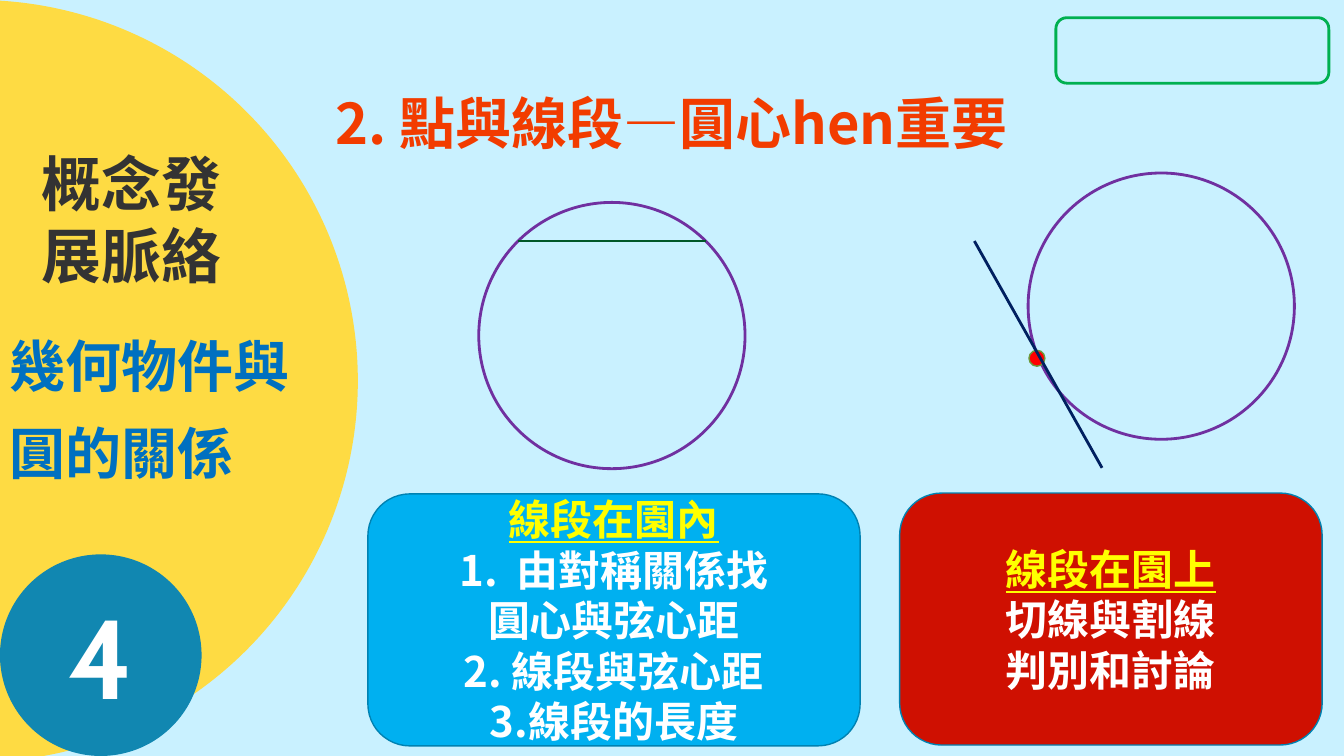
from dataclasses import dataclass

from lxml import etree
from pptx import Presentation
from pptx import util as u
from pptx.dml.color import RGBColor
from pptx.enum import shapes, text
from pptx.oxml import ns

COLUMNS, ROWS = 160, 90
CELL = u.Inches(7.5) / ROWS


@dataclass(frozen=True)
class Theme:
    sky: str = "C9F1FF"
    sun: str = "FEDB43"
    badge: str = "1187B1"
    ink: str = "333333"
    blue: str = "0070C0"
    title: str = "F23C00"
    circle: str = "7030A0"
    chord: str = "005828"
    navy: str = "002060"
    green: str = "00B050"
    red: str = "FF0000"
    dot_edge: str = "6C9A3B"
    inside: str = "00B0F0"
    on_circle: str = "CF1001"
    card_edge: str = "0082B2"
    yellow: str = "FFFF00"
    white: str = "FFFFFF"
    latin: str = "Cabin"
    cjk: str = "Noto Sans CJK SC"
    number_size: float = 80
    heading_size: float = 42.7
    title_size: float = 40
    card_size: float = 30


THEME = Theme()


def cells(*values):
    return [u.Emu(round(value * CELL)) for value in values]


def add_figure(page, kind, place, fill=None, line=None, weight=2):
    """Add a preset shape; place is column, row, columns, rows."""
    figure = page.shapes.add_shape(kind, *cells(*place))
    figure.shadow.inherit = False
    if fill:
        figure.fill.solid()
        figure.fill.fore_color.rgb = RGBColor.from_string(fill)
    else:
        figure.fill.background()
    if line:
        figure.line.color.rgb = RGBColor.from_string(line)
        figure.line.width = u.Pt(weight)
    else:
        figure.line.fill.background()
    return figure


def add_circle(page, column, row, size, **style):
    return add_figure(page, shapes.MSO_SHAPE.OVAL, (column, row, size, size), **style)


def add_line(page, start, end, color, weight):
    line = page.shapes.add_connector(
        shapes.MSO_CONNECTOR.STRAIGHT, *cells(*start, *end))
    line.line.color.rgb = RGBColor.from_string(color)
    line.line.width = u.Pt(weight)
    etree.SubElement(line._element.spPr, ns.qn("a:effectLst"))


def style_span(span, size, color, font=THEME.cjk):
    span.font.size = u.Pt(size)
    span.font.name = font
    span.font.bold = True
    span.font.color.rgb = RGBColor.from_string(color)
    east_asian = etree.SubElement(span._r.get_or_add_rPr(), ns.qn("a:ea"))
    east_asian.set("typeface", THEME.cjk)


def center(figure):
    frame = figure.text_frame
    frame.word_wrap = True
    frame.vertical_anchor = text.MSO_ANCHOR.MIDDLE
    for para in frame.paragraphs:
        para.alignment = text.PP_ALIGN.CENTER


def add_label(page, place, words, size, color, font=THEME.cjk, spacing=None):
    box = page.shapes.add_textbox(*cells(*place))
    box.text_frame.word_wrap = True
    box.text_frame.text = words
    para = box.text_frame.paragraphs[0]
    para.line_spacing = spacing
    style_span(para.runs[0], size, color, font)


def indent(para, numbered):
    """Hang the paragraph and number it when asked."""
    properties = para._p.get_or_add_pPr()
    hang = u.Inches(0.56)
    properties.set("marL", str(hang))
    properties.set("indent", str(-hang))
    if numbered:
        bullet = etree.SubElement(properties, ns.qn("a:buAutoNum"))
        bullet.set("type", "arabicPeriod")


def add_card(page, place, fill, lines, hanging=False):
    card = add_figure(page, shapes.MSO_SHAPE.ROUNDED_RECTANGLE, place,
                      fill, THEME.card_edge, 1)
    card.text_frame.text = "\n".join(lines)
    center(card)
    for index, para in enumerate(card.text_frame.paragraphs):
        span = para.runs[0]
        style_span(span, THEME.card_size, THEME.white if index else THEME.yellow)
        span.font.underline = index == 0
        if hanging and index:
            indent(para, numbered=index == 1)


def add_badge(page):
    badge = add_circle(page, 0, 66, 24, fill=THEME.badge)
    badge.text_frame.text = "4"
    center(badge)
    style_span(badge.text_frame.paragraphs[0].runs[0],
               THEME.number_size, THEME.white, THEME.latin)


def main():
    deck = Presentation()
    deck.slide_width, deck.slide_height = cells(COLUMNS, ROWS)
    page = deck.slides.add_slide(deck.slide_layouts[6])
    page.background.fill.solid()
    page.background.fill.fore_color.rgb = RGBColor.from_string(THEME.sky)

    # Left side: topic and number
    add_circle(page, -48.1, 0, 90.7, fill=THEME.sun)
    add_label(page, (3.8, 16.9, 24.4, 18.5), "概念發展脈絡",
              THEME.heading_size, THEME.ink, THEME.latin)
    add_label(page, (0, 36.5, 38.8, 22.2), "幾何物件與圓的關係",
              THEME.title_size, THEME.blue, spacing=1.3)
    add_badge(page)

    # Top: corner frame and title
    add_figure(page, shapes.MSO_SHAPE.ROUNDED_RECTANGLE,
               (125.7, 2.1, 32.5, 7.8), line=THEME.green)
    add_label(page, (38.8, 10, 86.9, 9.2), "2. 點與線段—圓心hen重要",
              THEME.title_size, THEME.title)

    # Circles, and the point of contact
    for column, row in ((57, 24.1), (122.4, 20.6)):
        add_circle(page, column, row, 31.7, line=THEME.circle)
    add_circle(page, 122.5, 41.7, 1.9, fill=THEME.red, line=THEME.dot_edge, weight=1)

    # Explanations
    add_card(page, (43.8, 58.8, 58.6, 30), THEME.inside,
             ("線段在園內", "由對稱關係找", "圓心與弦心距",
              "2. 線段與弦心距", "3.線段的長度"), hanging=True)
    add_card(page, (107.1, 58.7, 50.3, 30), THEME.on_circle,
             ("線段在園上", "切線與割線", "判別和討論"))

    # Chord and tangent
    add_line(page, (61.7, 28.7), (84, 28.7), THEME.chord, 1.5)
    add_line(page, (116, 28.7), (131.2, 55.7), THEME.navy, 2)

    deck.save("out.pptx")


if __name__ == "__main__":
    main()
